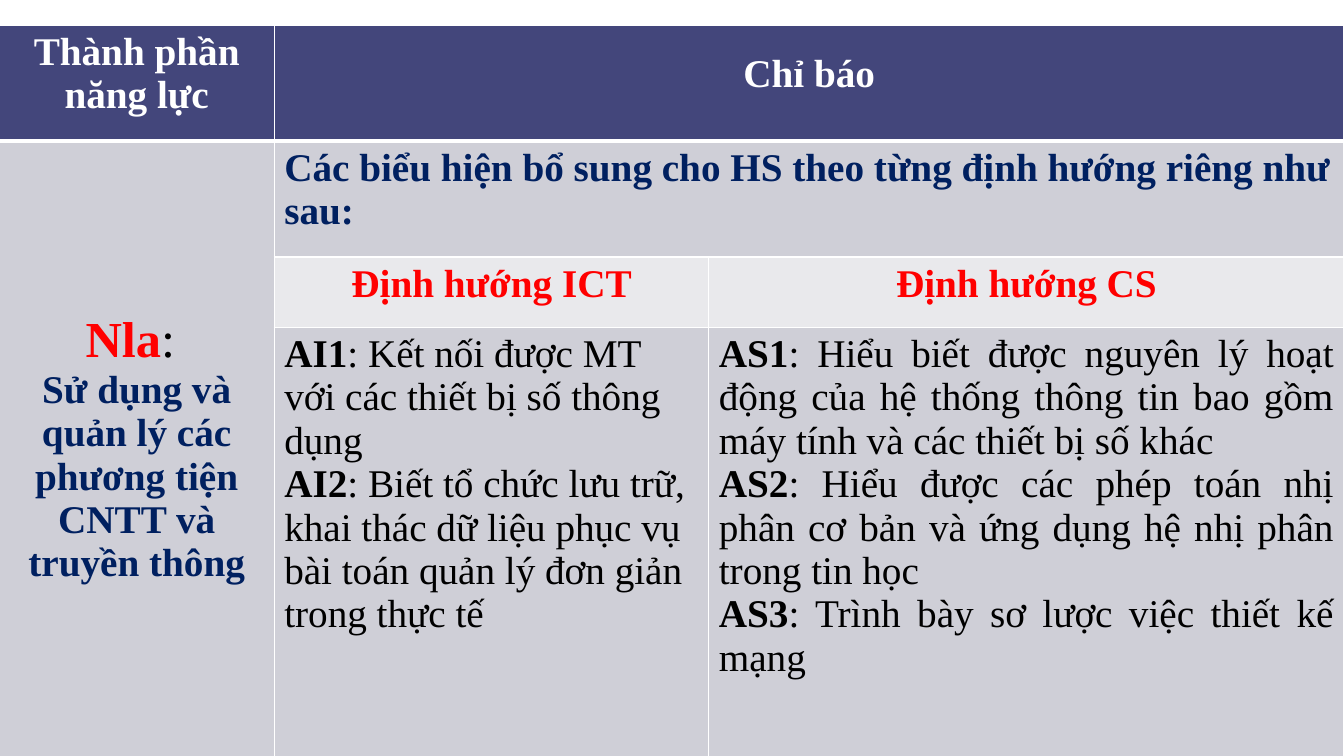
import pptx
import pptx.dml.color
import pptx.enum.text
import pptx.oxml
import pptx.oxml.ns
import pptx.util

COLORS = {
    "white": "FFFFFF",
    "header": "43467B",
    "band": "CFCFD7",
    "light": "E9E9EC",
    "navy": "002060",
    "red": "FF0000",
    "black": "000000",
}
ALIGN = pptx.enum.text.PP_ALIGN
ANCHOR = pptx.enum.text.MSO_ANCHOR


class SlideBuilder:
    font = "Times New Roman"
    text_size = 28
    scale = 9144

    def __init__(self, presentation):
        presentation.slide_width = self.px(1333)
        presentation.slide_height = self.px(750)
        self.slide = presentation.slides.add_slide(presentation.slide_layouts[6])

    def px(self, length):
        return pptx.util.Emu(length * self.scale)

    def color(self, name):
        return pptx.dml.color.RGBColor.from_string(COLORS[name])

    def table(self, left, top, column_widths, row_heights):
        frame = self.slide.shapes.add_table(
            len(row_heights), len(column_widths), self.px(left), self.px(top),
            self.px(sum(column_widths)), self.px(sum(row_heights)))
        table = frame.table
        for column, width in zip(table.columns, column_widths):
            column.width = self.px(width)
        for row, height in zip(table.rows, row_heights):
            row.height = self.px(height)
        return table

    def cell_style(self, cell, fill, top=1, bottom=1):
        properties = cell._tc.get_or_add_tcPr()
        for side, points in (("L", 1), ("R", 1), ("T", top), ("B", bottom)):
            properties.append(pptx.oxml.parse_xml(
                f'<a:ln{side} {pptx.oxml.ns.nsdecls("a")} w="{pptx.util.Pt(points)}">'
                f'<a:solidFill><a:srgbClr val="{COLORS["white"]}"/></a:solidFill>'
                f'</a:ln{side}>'))
        cell.fill.solid()
        cell.fill.fore_color.rgb = self.color(fill)

    def cell_text(self, cell, paragraphs, align=ALIGN.LEFT, anchor=ANCHOR.TOP):
        cell.vertical_anchor = anchor
        frame = cell.text_frame
        for index, runs in enumerate(paragraphs):
            paragraph = frame.add_paragraph() if index else frame.paragraphs[0]
            paragraph.alignment = align
            for text, color, bold, size in runs:
                run = paragraph.add_run()
                run.text = text
                run.font.name = self.font
                run.font.size = pptx.util.Pt(size)
                run.font.bold = bold
                run.font.color.rgb = self.color(color)

    def heading(self, cell, text, color, align=ALIGN.CENTER):
        self.cell_text(cell, [[(text, color, True, self.text_size)]], align)

    def indicators(self, cell, items, align):
        self.cell_text(cell, [
            [(code, "black", True, self.text_size),
             (": " + text, "black", False, self.text_size)]
            for code, text in items], align)


def main():
    presentation = pptx.Presentation()
    builder = SlideBuilder(presentation)
    table = builder.table(-1, 25, [273, 431, 630], [115, 115, 70, 426])

    row_fills = ["header", "band", "light", "band"]
    for row, fill in enumerate(row_fills):
        for column in range(3):
            cell_fill = "band" if row and column == 0 else fill
            builder.cell_style(table.cell(row, column), cell_fill,
                               top=3 if row == 1 else 1,
                               bottom=3 if row == 0 else 1)
    for first, last in (((0, 1), (0, 2)), ((1, 0), (3, 0)), ((1, 1), (1, 2))):
        table.cell(*first).merge(table.cell(*last))

    builder.heading(table.cell(0, 0), "Thành phần năng lực", "white")
    builder.heading(table.cell(0, 1), "Chỉ báo", "white")
    table.cell(0, 1).margin_top = builder.px(27)

    builder.cell_text(table.cell(1, 0), [
        [("Nla", "red", True, 36), (": ", "black", False, 36)],
        [("Sử dụng và quản lý các phương tiện CNTT và truyền thông",
          "navy", True, builder.text_size)],
    ], ALIGN.CENTER, ANCHOR.MIDDLE)
    builder.heading(
        table.cell(1, 1),
        "Các biểu hiện bổ sung cho HS theo từng định hướng riêng như sau:",
        "navy", ALIGN.LEFT)
    builder.heading(table.cell(2, 1), "Định hướng ICT", "red")
    builder.heading(table.cell(2, 2), "Định hướng CS", "red")

    builder.indicators(table.cell(3, 1), [
        ("AI1", "Kết nối được MT với các thiết bị số thông dụng"),
        ("AI2", "Biết tổ chức lưu trữ, khai thác dữ liệu phục vụ bài toán "
                "quản lý đơn giản trong thực tế"),
    ], ALIGN.LEFT)
    builder.indicators(table.cell(3, 2), [
        ("AS1", "Hiểu biết được nguyên lý hoạt động của hệ thống thông tin "
                "bao gồm máy tính và các thiết bị số khác"),
        ("AS2", "Hiểu được các phép toán nhị phân cơ bản và ứng dụng "
                "hệ nhị phân trong tin học"),
        ("AS3", "Trình bày sơ lược việc thiết kế mạng"),
    ], ALIGN.JUSTIFY)

    presentation.save("out.pptx")


if __name__ == "__main__":
    main()
